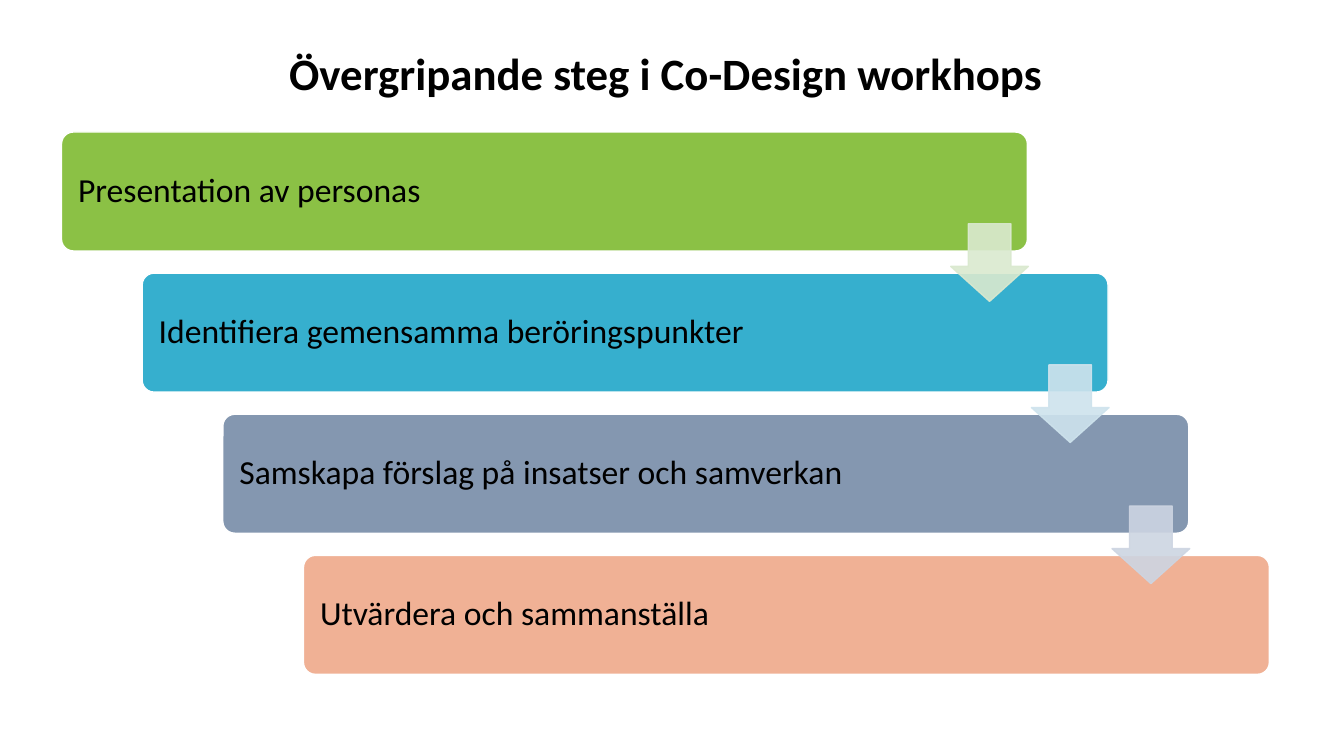
from lxml import etree
from pptx import Presentation
from pptx import util as u
from pptx.dml.color import RGBColor
from pptx.enum import shapes, text
from pptx.oxml.ns import qn

TITLE = "Övergripande steg i Co-Design workhops"
STEPS = [
    ("Presentation av personas", "green"),
    ("Identifiera gemensamma beröringspunkter", "blue"),
    ("Samskapa förslag på insatser och samverkan", "slate"),
    ("Utvärdera och sammanställa", "peach"),
]
ARROWS = ["pale green", "pale blue", "pale slate"]
COLORS = {
    "green": "8BC145", "blue": "36AFCE", "slate": "8497B0", "peach": "F0B195",
    "pale green": "DAE9CF", "pale blue": "CEE3ED", "pale slate": "CDD5E2",
    "white": "FFFFFF", "black": "000000",
}
FONT = "Calibri"
WIDTH, HEIGHT = 13.33, 7.5
FIRST_LEFT, FIRST_TOP = 0.61, 1.31
STEP_X, STEP_Y = 0.8, 1.4
BAR_WIDTH, BAR_HEIGHT = 9.58, 1.18
ARROW_SIZE = 0.77
ARROW_X, ARROW_Y = 8.82, 0.91


def color(name):
    return RGBColor.from_string(COLORS[name])


def style_text(paragraph, size, bold=False):
    paragraph.font.name = FONT
    paragraph.font.size = u.Pt(size)
    paragraph.font.bold = bold
    paragraph.font.color.rgb = color("black")


def add_block(slide, kind, box, fill, line, adjustments):
    shape = slide.shapes.add_shape(kind, *map(u.Inches, box))
    shape.shadow.inherit = False
    shape.fill.solid()
    shape.fill.fore_color.rgb = color(fill)
    shape.line.color.rgb = color(line)
    shape.line.width = u.Pt(1)
    for index, value in enumerate(adjustments):
        shape.adjustments[index] = value
    return shape


def add_title(slide):
    title = slide.shapes.title
    title.left, title.top = u.Inches(1.9), u.Inches(0.29)
    title.width, title.height = u.Inches(9.41), u.Inches(0.64)
    frame = title.text_frame
    frame.text = TITLE
    frame.auto_size = text.MSO_AUTO_SIZE.SHAPE_TO_FIT_TEXT
    frame.vertical_anchor = text.MSO_ANCHOR.TOP
    frame.margin_left = frame.margin_right = frame.margin_top = frame.margin_bottom = 0
    paragraph = frame.paragraphs[0]
    paragraph.alignment = text.PP_ALIGN.CENTER
    paragraph.line_spacing = 1.3
    style_text(paragraph, 32, True)


def add_bar(slide, row, label, fill):
    box = (FIRST_LEFT + row * STEP_X, FIRST_TOP + row * STEP_Y, BAR_WIDTH, BAR_HEIGHT)
    bar = add_block(slide, shapes.MSO_SHAPE.ROUNDED_RECTANGLE, box, fill, "white", [0.1])
    frame = bar.text_frame
    frame.text = label
    frame.word_wrap = True
    frame.vertical_anchor = text.MSO_ANCHOR.MIDDLE
    frame.margin_left = u.Inches(0.13)
    paragraph = frame.paragraphs[0]
    paragraph.alignment = text.PP_ALIGN.LEFT
    paragraph.line_spacing = 0.9
    style_text(paragraph, 24)


def add_arrow(slide, row, fill):
    box = (FIRST_LEFT + row * STEP_X + ARROW_X, FIRST_TOP + row * STEP_Y + ARROW_Y,
           ARROW_SIZE, ARROW_SIZE)
    arrow = add_block(slide, shapes.MSO_SHAPE.DOWN_ARROW, box, fill, fill, [0.45, 0.55])
    arrow.adjustments[0], arrow.adjustments[1] = 0.55, 0.45
    for tint in arrow.element.spPr.iter(qn("a:srgbClr")):
        etree.SubElement(tint, qn("a:alpha")).set("val", "90000")


def main():
    presentation = Presentation()
    presentation.slide_width = u.Inches(WIDTH)
    presentation.slide_height = u.Inches(HEIGHT)
    slide = presentation.slides.add_slide(presentation.slide_layouts[5])
    add_title(slide)
    for row, (label, fill) in enumerate(STEPS):
        add_bar(slide, row, label, fill)
    for row, fill in enumerate(ARROWS):
        add_arrow(slide, row, fill)
    presentation.save("out.pptx")


if __name__ == "__main__":
    main()
